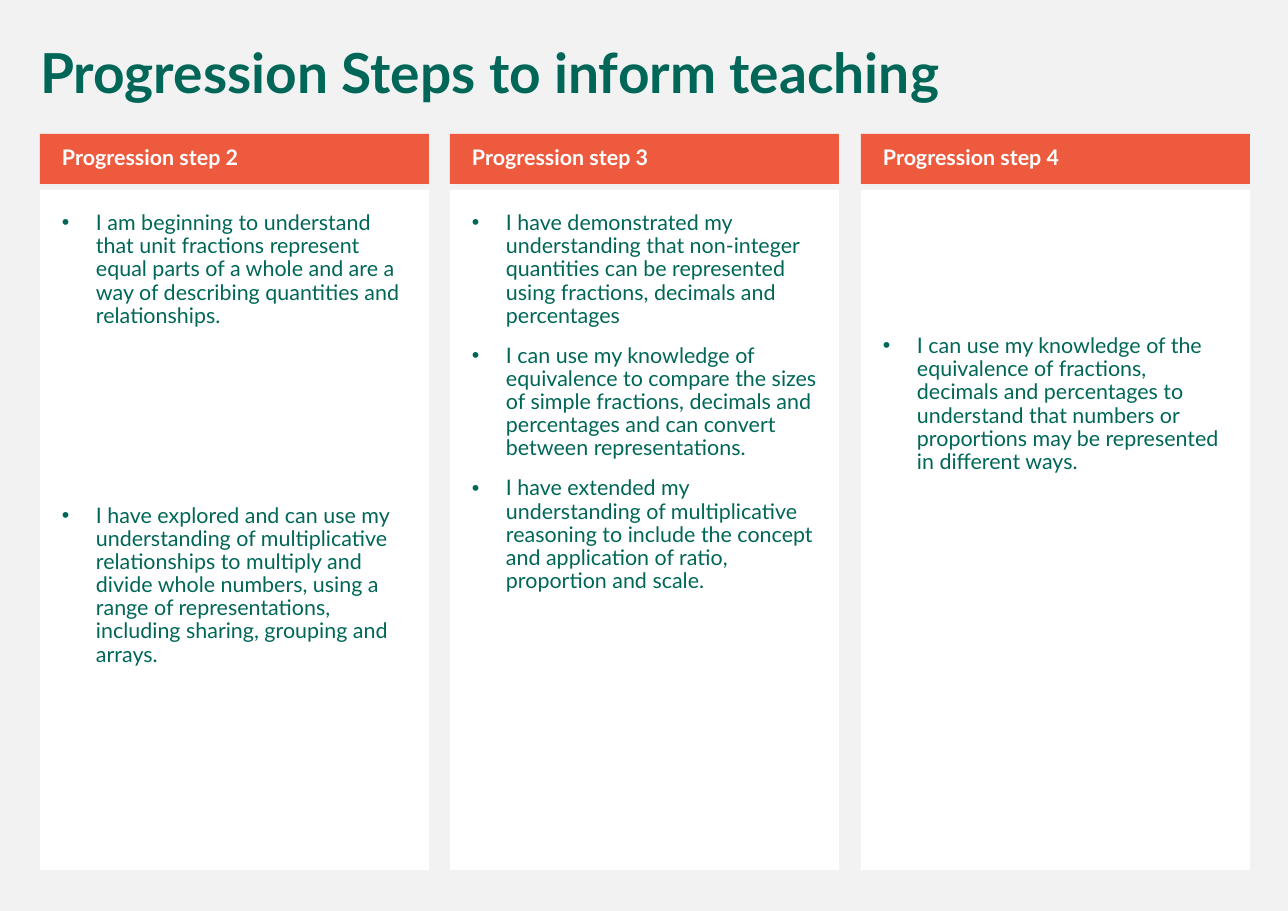
import pptx
import pptx.util
import pptx.dml.color
import pptx.enum.shapes
import pptx.enum.text
import lxml.etree

# Content: heading, top inset in px, then (space before in pt, text)
TITLE = "Progression Steps to inform teaching"
STEPS = [
    ("Progression step 2", 22, [
        (11, "I am beginning to understand that unit fractions represent equal parts "
             "of a whole and are a way of describing quantities and relationships."),
        (115.5, "I have explored and can use my understanding of multiplicative "
                "relationships to multiply and divide whole numbers, using a range of "
                "representations, including sharing, grouping and arrays."),
    ]),
    ("Progression step 3", 22, [
        (11, "I have demonstrated my understanding that non-integer quantities can be "
             "represented using fractions, decimals and percentages"),
        (11, "I can use my knowledge of equivalence to compare the sizes of simple "
             "fractions, decimals and percentages and can convert between "
             "representations."),
        (11, "I have extended my understanding of multiplicative reasoning to include "
             "the concept and application of ratio, proportion and scale."),
    ]),
    ("Progression step 4", 145, [
        (11, "I can use my knowledge of the equivalence of fractions, decimals and "
             "percentages to understand that numbers or proportions may be "
             "represented in different ways."),
    ]),
]

THEME = {
    "font": "Lato", "back": "F2F2F2", "green": "006758", "orange": "ED5A3E",
    "white": "FFFFFF", "large": 36, "small": 14,
}

# Layout in px
SCALE = 914400 / 110.2
WIDE, HIGH = 1288, 911
LEFT, SPAN, WIDTH = 40, 1210, 389
HEAD_TOP, HEAD_H = 134, 50
BODY_TOP, BODY_H = 190, 680
INDENT = 34
SIDES = ("left", "top", "right", "bottom")
TOP = pptx.enum.text.MSO_ANCHOR.TOP
MIDDLE = pptx.enum.text.MSO_ANCHOR.MIDDLE


def px(size):
    return pptx.util.Emu(round(size * SCALE))


def color(name):
    return pptx.dml.color.RGBColor.from_string(THEME[name])


def setup(item, values):
    for name, value in values.items():
        setattr(item, name, value)


def bullet(para):
    props = para._p.get_or_add_pPr()
    props.set("marL", str(px(INDENT)))
    props.set("indent", str(-px(INDENT)))
    tag = pptx.oxml.ns.qn
    lxml.etree.SubElement(props, tag("a:buFont")).set("typeface", "Arial")
    lxml.etree.SubElement(props, tag("a:buChar")).set("char", "•")


def write(shape, lines, inset, size, ink, bold=False, anchor=TOP, dots=False):
    frame = shape.text_frame
    setup(frame, {"word_wrap": True, "vertical_anchor": anchor})
    setup(frame, {f"margin_{side}": px(gap) for side, gap in zip(SIDES, inset)})
    for i, (space, text) in enumerate(lines):
        para = frame.add_paragraph() if i else frame.paragraphs[0]
        setup(para, {"alignment": pptx.enum.text.PP_ALIGN.LEFT, "line_spacing": 0.9,
                     "space_before": pptx.util.Pt(space)})
        if dots:
            bullet(para)
        run = para.add_run()
        run.text = text
        setup(run.font, {"name": THEME["font"], "bold": bold,
                         "size": pptx.util.Pt(THEME[size])})
        run.font.color.rgb = color(ink)


def panel(slide, left, top, high, fill):
    kind = pptx.enum.shapes.MSO_SHAPE.RECTANGLE
    shape = slide.shapes.add_shape(kind, px(left), px(top), px(WIDTH), px(high))
    shape.shadow.inherit = False
    shape.fill.solid()
    shape.fill.fore_color.rgb = color(fill)
    shape.line.fill.background()
    return shape


def main():
    deck = pptx.Presentation()
    setup(deck, {"slide_width": px(WIDE), "slide_height": px(HIGH)})
    slide = deck.slides.add_slide(deck.slide_layouts[6])
    slide.background.fill.solid()
    slide.background.fill.fore_color.rgb = color("back")

    # Three equal columns, spread evenly over the span
    for i, (head, inset, lines) in enumerate(STEPS):
        left = LEFT + (SPAN - WIDTH) * i // (len(STEPS) - 1)
        body = panel(slide, left, BODY_TOP, BODY_H, "white")
        write(body, lines, (22, inset, 22, 22), "small", "green", dots=True)
        bar = panel(slide, left, HEAD_TOP, HEAD_H, "orange")
        write(bar, [(11, head)], (22, 6, 11, 6), "small", "white", True, MIDDLE)

    # Title
    box = slide.shapes.add_textbox(px(29), px(40), px(1221), px(72))
    write(box, [(11, TITLE)], (11, 6, 11, 6), "large", "green", True)

    deck.save("out.pptx")


if __name__ == "__main__":
    main()
